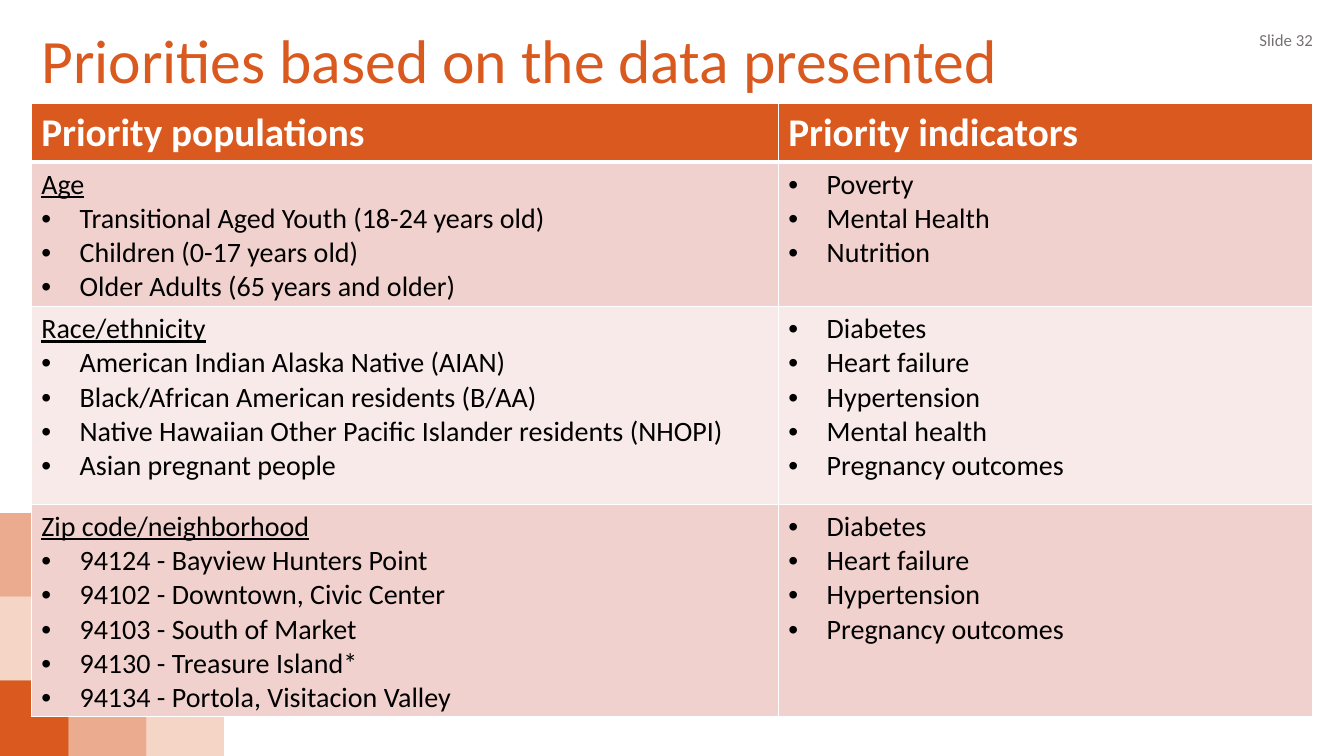
"""Build the slide on priority populations and indicators."""
from lxml import etree
from pptx import Presentation
from pptx.dml.color import RGBColor
from pptx.enum import shapes, text
from pptx.oxml import ns
from pptx.util import Inches, Pt

COLORS = {"orange": "D9591E", "white": "FFFFFF", "black": "000000",
          "gray": "767171", "dark_band": "F1D1CD", "light_band": "F8EAE8"}
FONT = "Calibri"
INDENT = Inches(0.38)
HEADERS = ["Priority populations", "Priority indicators"]
GROUPS = [
    ("Age",
     ["Transitional Aged Youth (18-24 years old)", "Children (0-17 years old)",
      "Older Adults (65 years and older)"],
     ["Poverty", "Mental Health", "Nutrition"]),
    ("Race/ethnicity",
     ["American Indian Alaska Native (AIAN)",
      "Black/African American residents (B/AA)",
      "Native Hawaiian Other Pacific Islander residents (NHOPI)",
      "Asian pregnant people"],
     ["Diabetes", "Heart failure", "Hypertension", "Mental health",
      "Pregnancy outcomes"]),
    ("Zip code/neighborhood",
     ["94124 - Bayview Hunters Point", "94102 - Downtown, Civic Center",
      "94103 - South of Market", "94130 - Treasure Island*",
      "94134 - Portola, Visitacion Valley"],
     ["Diabetes", "Heart failure", "Hypertension", "Pregnancy outcomes"]),
]


def style(paragraph, size, color, bold=False, underline=False):
    font = paragraph.font
    font.name, font.size = FONT, Pt(size)
    font.bold, font.underline = bold, underline
    font.color.rgb = RGBColor.from_string(COLORS[color])


def fill_cell(cell, color, top, bottom):
    properties = cell._tc.get_or_add_tcPr()
    for side, width in zip("LRTB", (1, 1, top, bottom)):
        line = etree.SubElement(properties, ns.qn(f"a:ln{side}"), w=str(Pt(width)))
        solid = etree.SubElement(line, ns.qn("a:solidFill"))
        etree.SubElement(solid, ns.qn("a:srgbClr"), val=COLORS["white"])
    cell.fill.solid()
    cell.fill.fore_color.rgb = RGBColor.from_string(COLORS[color])


presentation = Presentation()
presentation.slide_width, presentation.slide_height = Inches(13.33), Inches(7.5)
slide = presentation.slides.add_slide(presentation.slide_layouts[5])

for column, row, opacity in [(0, 0, 100), (1, 0, 50), (0, 1, 25),
                             (1, 1, 70), (2, 0, 25), (0, 2, 50)]:
    square = slide.shapes.add_shape(
        shapes.MSO_SHAPE.RECTANGLE, Inches(-0.12 + 0.77 * column),
        Inches(6.78 - 0.83 * row), Inches(0.83), Inches(0.77))
    square.rotation = 90
    square.shadow.inherit = False
    square.line.fill.background()
    square.fill.solid()
    square.fill.fore_color.rgb = RGBColor.from_string(COLORS["orange"])
    if opacity < 100:
        color_element = square._element.spPr.find(".//" + ns.qn("a:srgbClr"))
        etree.SubElement(color_element, ns.qn("a:alpha"), val=str(opacity * 1000))

slide_number = slide.shapes.add_textbox(Inches(10.12), Inches(0.2), Inches(3), Inches(0.4))
slide_number.text_frame.word_wrap = True
slide_number.text_frame.vertical_anchor = text.MSO_ANCHOR.MIDDLE
paragraph = slide_number.text_frame.paragraphs[0]
paragraph.text = "Slide 32"
paragraph.alignment = text.PP_ALIGN.RIGHT
style(paragraph, 12, "gray")

title = slide.shapes.title
title.left, title.top = Inches(0.31), Inches(0.21)
title.width, title.height = Inches(12.21), Inches(0.84)
title.text_frame.vertical_anchor = text.MSO_ANCHOR.MIDDLE
title.text_frame.auto_size = text.MSO_AUTO_SIZE.NONE
paragraph = title.text_frame.paragraphs[0]
paragraph.text = "Priorities based on the data presented"
paragraph.alignment = text.PP_ALIGN.LEFT
paragraph.line_spacing = 0.9
style(paragraph, 44, "orange")

table = slide.shapes.add_table(4, 2, Inches(0.31), Inches(1.03),
                               Inches(12.71), Inches(6.07)).table
for column, width in zip(table.columns, (7.41, 5.3)):
    column.width = Inches(width)
for row, height in zip(table.rows, (0.58, 1.21, 1.96, 1.79)):
    row.height = Inches(height)

for column, header in enumerate(HEADERS):
    cell = table.cell(0, column)
    fill_cell(cell, "orange", 1, 3)
    cell.text = header
    style(cell.text_frame.paragraphs[0], 28, "white", bold=True)

for row, (heading, populations, indicators) in enumerate(GROUPS, 1):
    for column, lines in enumerate(([heading] + populations, indicators)):
        cell = table.cell(row, column)
        fill_cell(cell, "dark_band" if row % 2 else "light_band", 3 if row == 1 else 1, 1)
        cell.text = "\n".join(lines)
        for paragraph in cell.text_frame.paragraphs:
            is_heading = paragraph.text == heading
            if not is_heading:
                properties = paragraph._p.get_or_add_pPr()
                properties.set("marL", str(INDENT))
                properties.set("indent", str(-INDENT))
                etree.SubElement(properties, ns.qn("a:buFont"), typeface="Arial")
                etree.SubElement(properties, ns.qn("a:buChar"), char="•")
            style(paragraph, 20, "black", underline=is_heading)

presentation.save("out.pptx")
